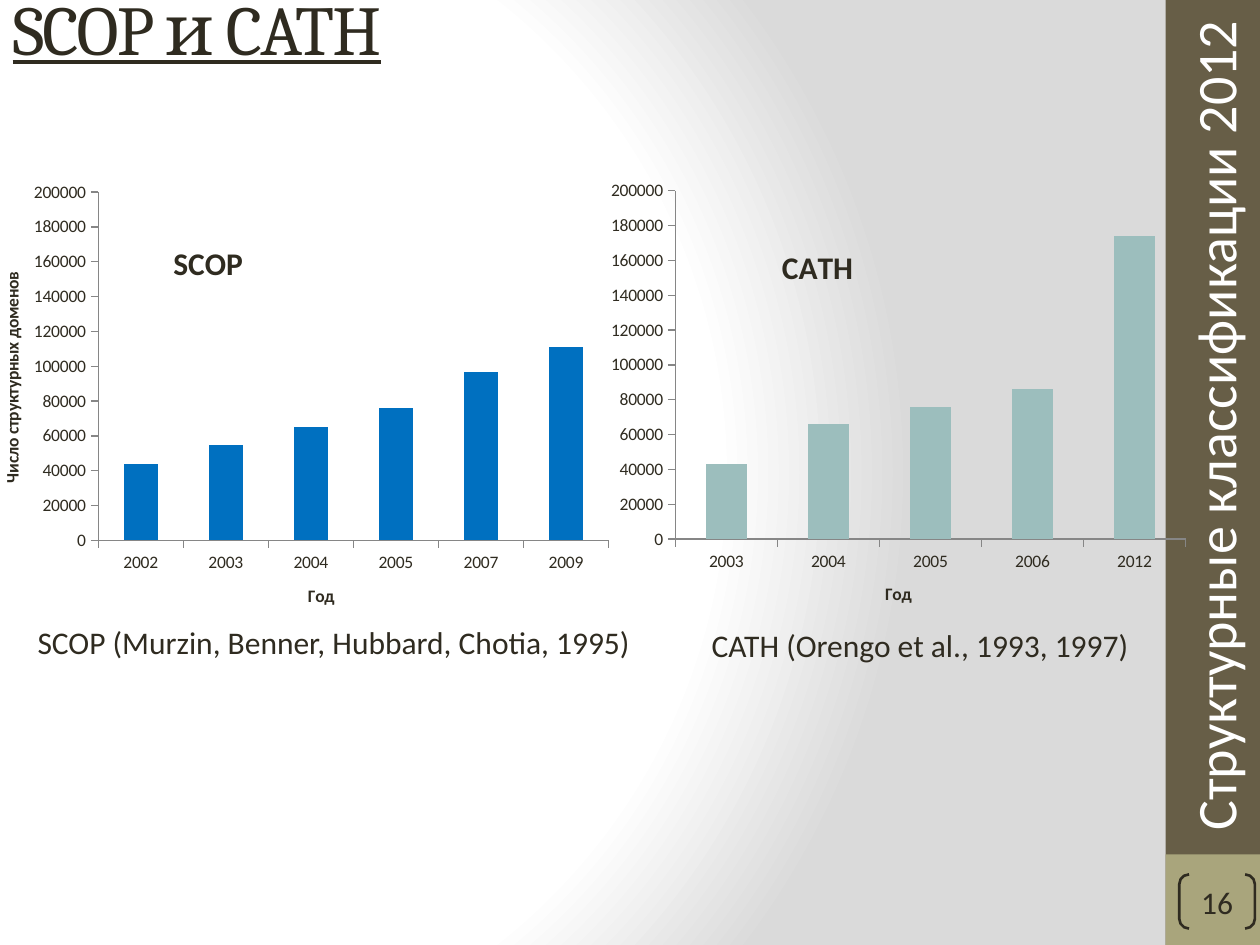
from lxml.etree import SubElement
from pptx import Presentation
from pptx.chart.data import CategoryChartData
from pptx.dml.color import RGBColor
from pptx.enum.chart import XL_CHART_TYPE, XL_TICK_LABEL_POSITION, XL_TICK_MARK
from pptx.enum.shapes import MSO_SHAPE
from pptx.enum.text import MSO_ANCHOR, PP_ALIGN
from pptx.oxml import parse_xml
from pptx.oxml.ns import nsdecls, qn
from pptx.util import Inches, Pt

COLUMNS, ROWS = 100, 75
CELL = Inches(0.1)
INK, WHITE, GREY = "2F2B20", "FFFFFF", "868686"
OLIVE, SAND = "675E47", "A9A57C"
SIDEBAR_COLUMN, SIDEBAR_COLUMNS = 92.5, 7.5


def grid(*cells):
    return [round(cell * CELL) for cell in cells]


def color(hex_value):
    return RGBColor.from_string(hex_value)


def style_font(font, size, hex_value=INK, name="Calibri", bold=None):
    font.size, font.name, font.bold = Pt(size), name, bold
    font.color.rgb = color(hex_value)


def write(frame, text, size, hex_value=INK, name="Calibri"):
    run = frame.paragraphs[0].add_run()
    run.text = text
    style_font(run.font, size, hex_value, name)
    return run


def paint_background(slide):
    """Fill the slide with a circular white-to-grey gradient."""
    fill = slide.background.fill
    fill.gradient()
    gradient = slide.element.find(".//" + qn("a:gradFill"))
    for part in list(gradient):
        gradient.remove(part)
    stops = SubElement(gradient, qn("a:gsLst"))
    for percent, hex_value in ((0, WHITE), (75, WHITE), (100, "DADADA")):
        stop = SubElement(stops, qn("a:gs"), pos=str(percent * 1000))
        SubElement(stop, qn("a:srgbClr"), val=hex_value)
    path = SubElement(gradient, qn("a:path"))
    path.set("path", "circle")
    SubElement(path, qn("a:fillToRect"), l="20000", t="50000", r="100000", b="50000")


def add_band(slide, row, rows, hex_value):
    band = slide.shapes.add_shape(
        MSO_SHAPE.RECTANGLE, *grid(SIDEBAR_COLUMN, row, SIDEBAR_COLUMNS, rows))
    band.shadow.inherit = False
    band.fill.solid()
    band.fill.fore_color.rgb = color(hex_value)
    band.line.fill.background()


def add_label(slide, cells, text, size, hex_value=INK, wrap=False):
    label = slide.shapes.add_textbox(*grid(*cells))
    label.text_frame.word_wrap = wrap
    write(label.text_frame, text, size, hex_value)
    return label


def set_title(slide, text):
    title = slide.shapes.title
    title.left, title.top, title.width, title.height = grid(0, 0, 82.1, 6)
    frame = title.text_frame
    frame.vertical_anchor = MSO_ANCHOR.BOTTOM
    frame.paragraphs[0].alignment = PP_ALIGN.LEFT
    run = write(frame, text, 40, name="Cambria")
    run.font.underline = True
    run.font._element.set("spc", "-100")


def add_page_number(slide, number):
    bracket = slide.shapes.add_shape(MSO_SHAPE.DOUBLE_BRACKET, *grid(93.6, 69.4, 6, 4.3))
    bracket.adjustments[0] = 0.18
    bracket.shadow.inherit = False
    bracket.fill.background()
    bracket.line.color.rgb = color(INK)
    bracket.line.width = Pt(1.5)
    frame = bracket.text_frame
    frame.margin_left = frame.margin_right = frame.margin_top = frame.margin_bottom = 0
    frame.vertical_anchor = MSO_ANCHOR.MIDDLE
    frame.paragraphs[0].alignment = PP_ALIGN.CENTER
    write(frame, number, 18)


def place(element, index, target=None, **shares):
    """Give a chart part a manual layout, in shares of the chart."""
    for old in element.findall(qn("c:layout")):
        element.remove(old)
    layout = parse_xml(f"<c:layout {nsdecls('c')}><c:manualLayout/></c:layout>")
    manual = layout[0]
    if target:
        SubElement(manual, qn("c:layoutTarget"), val=target)
    for key in ("x", "y"):
        SubElement(manual, qn(f"c:{key}Mode"), val="edge")
    for key, share in shares.items():
        SubElement(manual, qn(f"c:{key}"), val=str(share))
    element.insert(index, layout)


def style_axis(axis, title):
    axis.has_major_gridlines = False
    axis.major_tick_mark = XL_TICK_MARK.OUTSIDE
    axis.minor_tick_mark = XL_TICK_MARK.NONE
    axis.format.line.color.rgb = color(GREY)
    axis.has_title = bool(title)
    if title:
        run = write(axis.axis_title.text_frame, title, 10)
        run.font.bold = True


def add_domain_chart(slide, cells, name, domains, bar_color, plot_at, title_at, value_title=None):
    data = CategoryChartData()
    data.categories = list(domains)
    data.add_series(name, list(domains.values()))
    chart = slide.shapes.add_chart(
        XL_CHART_TYPE.COLUMN_CLUSTERED, *grid(*cells), data).chart
    style_font(chart.font, 10)
    chart.has_legend = False

    chart.has_title = True
    write(chart.chart_title.text_frame, name, 18).font.bold = True
    chart.chart_title.include_in_layout = False
    title = chart.element.find(f"{qn('c:chart')}/{qn('c:title')}")
    place(title, 1, x=title_at[0], y=title_at[1])
    place(chart.element.find(".//" + qn("c:plotArea")), 0, "inner",
          x=plot_at[0], y=plot_at[1], w=0.81, h=0.79)

    style_axis(chart.category_axis, "Год")
    chart.category_axis.tick_label_position = XL_TICK_LABEL_POSITION.LOW
    values = chart.value_axis
    style_axis(values, value_title)
    values.minimum_scale, values.maximum_scale, values.major_unit = 0, 200000, 20000
    values.tick_labels.number_format = "0"
    values.tick_labels.number_format_is_linked = False

    plot = chart.plots[0]
    plot.gap_width = 150
    plot.vary_by_categories = False
    bars = plot.series[0].format.fill
    bars.solid()
    bars.fore_color.rgb = color(bar_color)


def main():
    deck = Presentation()
    deck.slide_width, deck.slide_height = grid(COLUMNS, ROWS)
    slide = deck.slides.add_slide(deck.slide_layouts[5])
    paint_background(slide)

    add_band(slide, 0, ROWS, OLIVE)
    add_band(slide, 67.8, 7.5, SAND)
    section = add_label(slide, (63.2, 30.5, 66.4, 6.4),
                        "Структурные классификации 2012", 32, WHITE, wrap=True)
    section.rotation = 270
    set_title(slide, "SCOP и CATH")
    add_page_number(slide, "16")

    scop = {"2002": 44000, "2003": 55000, "2004": 65000,
            "2005": 76000, "2007": 97000, "2009": 111000}
    cath = {"2003": 43000, "2004": 66000, "2005": 76000,
            "2006": 86000, "2012": 174000}
    add_domain_chart(slide, (-0.2, 14.2, 50, 35), "SCOP", scop, "0070C0",
                     (0.16, 0.03), (0.27, 0.13), "Число структурных доменов")
    add_domain_chart(slide, (47.6, 13.4, 50, 35), "CATH", cath, "9CBEBD",
                     (0.12, 0.05), (0.28, 0.16))

    scop_source = add_label(slide, (2, 49.2, 49.6, 3.8),
                            "SCOP (Murzin, Benner, Hubbard, Chotia, 1995)", 18)
    scop_source.text_frame.paragraphs[0].line_spacing = 0.93
    add_label(slide, (55.5, 49.2, 35.5, 4), "CATH (Orengo et al., 1993, 1997)", 18)
    deck.save("out.pptx")


if __name__ == "__main__":
    main()
